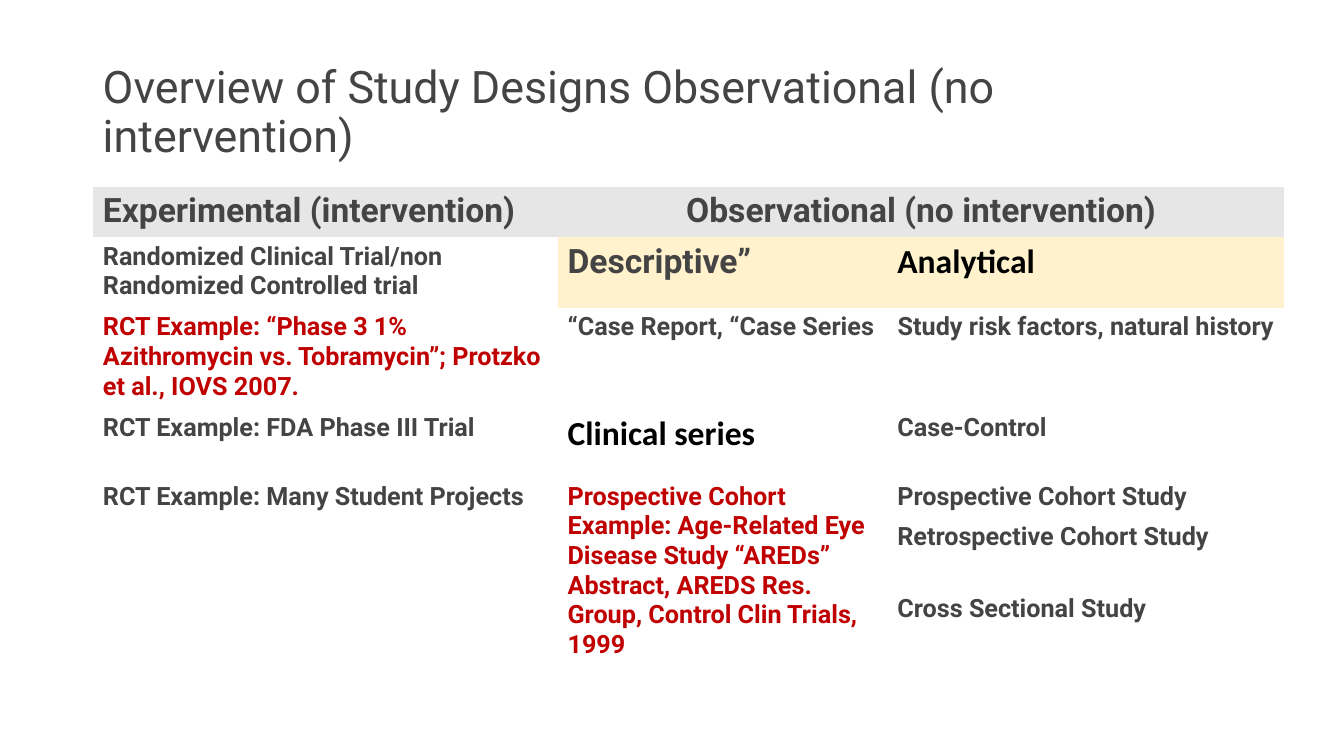
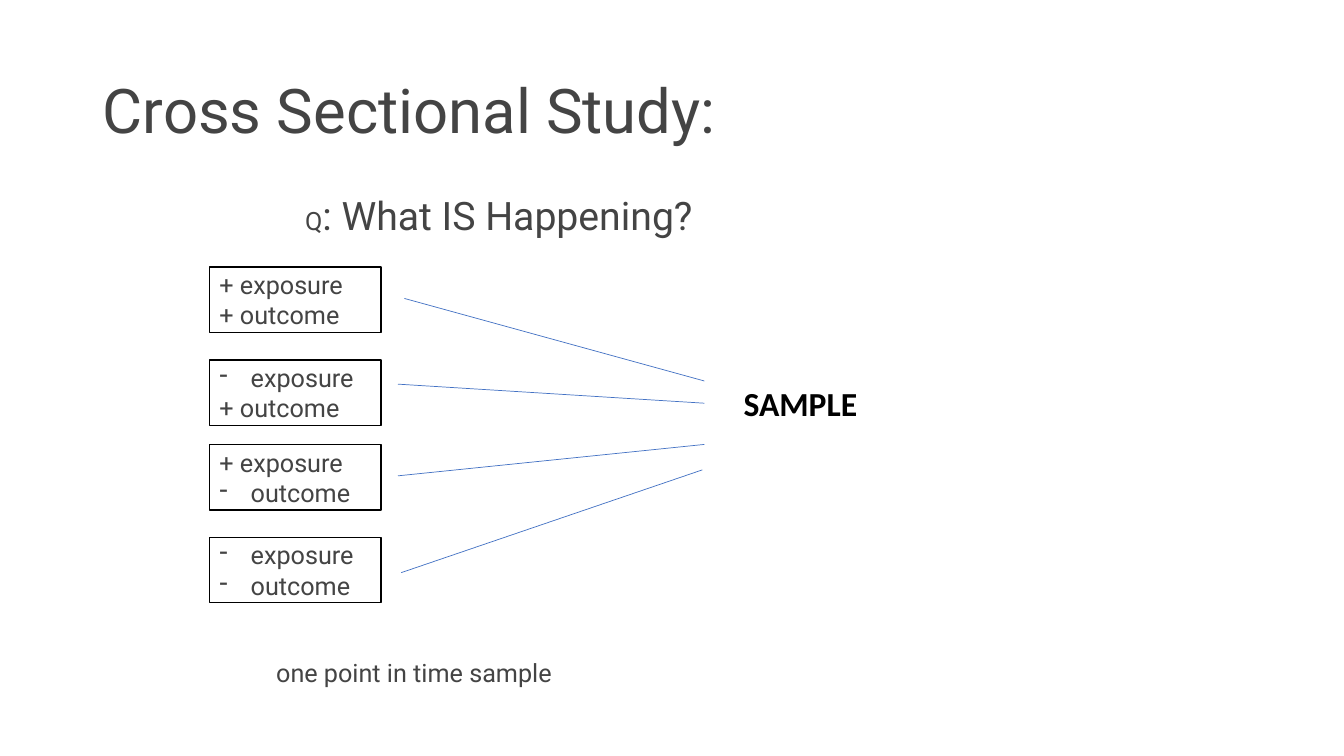
from lxml.etree import SubElement
from pptx import Presentation
from pptx.dml.color import RGBColor
from pptx.enum.shapes import MSO_CONNECTOR, MSO_SHAPE
from pptx.enum.text import MSO_ANCHOR, PP_ALIGN
from pptx.oxml.ns import qn
from pptx.util import Cm, Pt

GREY, BLACK, RED, BLUE = "444444", "000000", "C00000", "4472C4"
WHITE, HEADER_FILL, SUBHEAD_FILL = "FFFFFF", "E7E6E6", "FFF2CC"
BODY_FONT, ACCENT_FONT = "Roboto", "Calibri"
PLAIN_TABLE = "{2D5ABB26-0587-4C30-8999-92F81FD0307C}"
HEADING = {"size": 24}
ACCENT = {"size": 24, "color": BLACK, "font": ACCENT_FONT}
CITED = {"color": RED}

COLUMN_WIDTHS = (11.71, 8.31, 10.01)
ROW_HEIGHTS = (1.27, 1.73, 2.46, 1.73, 0.98, 1.8, 1.95)
DESIGNS = [
    [("Experimental (intervention)", HEADING),
     ("Observational (no intervention)", {"size": 24, "align": PP_ALIGN.CENTER}),
     None],
    [("Randomized Clinical Trial/non Randomized Controlled trial", {}),
     ("Descriptive”", HEADING),
     ("Analytical", ACCENT)],
    [("RCT Example: “Phase 3 1% Azithromycin vs. Tobramycin”; "
      "Protzko et al., IOVS 2007.", CITED),
     ("“Case Report, “Case Series", {}),
     ("Study risk factors, natural history", {"align": PP_ALIGN.CENTER})],
    [("RCT Example: FDA Phase III Trial", {}),
     ("Clinical series", ACCENT),
     ("Case-Control", {})],
    [("RCT Example: Many Student Projects", {}),
     ("Prospective Cohort Example: Age-Related Eye Disease Study “AREDs” "
      "Abstract, AREDS Res. Group, Control Clin Trials, 1999", CITED),
     ("Prospective Cohort Study", {})],
    [None, None, ("Retrospective Cohort Study", {})],
    [None, None, ("Cross Sectional Study", {})],
]
MERGES = (((0, 1), (0, 2)), ((4, 0), (6, 0)), ((4, 1), (6, 1)))

GROUPS = ((6.73, "+", "+"), (9.07, "-", "+"), (11.2, "+", "-"), (13.54, "-", "-"))
SAMPLE_LINES = (
    (10.19, 7.52, 17.75, 9.6),
    (10.03, 9.68, 17.75, 10.16),
    (10.03, 11.99, 17.75, 11.2),
    (10.11, 14.43, 17.7, 11.84),
)


def rgb(color):
    return RGBColor.from_string(color)


def write(paragraph, text, size=18, color=GREY, font=BODY_FONT, bold=False,
          align=None, spacing=None):
    run = paragraph.add_run()
    run.text = text
    run.font.size = Pt(size)
    run.font.name = font
    run.font.bold = bold
    run.font.color.rgb = rgb(color)
    if align is not None:
        paragraph.alignment = align
    if spacing is not None:
        paragraph.line_spacing = spacing


def add_dash(paragraph):
    properties = paragraph._p.get_or_add_pPr()
    properties.set("marL", str(Cm(0.79)))
    properties.set("indent", str(-Cm(0.79)))
    SubElement(properties, qn("a:buChar")).set("char", "-")


def add_text(slide, left, top, width, height, anchor=MSO_ANCHOR.TOP):
    frame = slide.shapes.add_textbox(
        Cm(left), Cm(top), Cm(width), Cm(height)).text_frame
    frame.word_wrap = True
    frame.vertical_anchor = anchor
    return frame.paragraphs[0]


def add_title(slide, text, size):
    title = add_text(slide, 2.34, 1.02, 29.21, 3.68, MSO_ANCHOR.MIDDLE)
    write(title, text, size=size, spacing=0.9)


def cell_fill(row, column):
    if row == 0:
        return HEADER_FILL
    return SUBHEAD_FILL if row == 1 and column > 0 else WHITE


def add_design_table(slide):
    table = slide.shapes.add_table(
        len(ROW_HEIGHTS), len(COLUMN_WIDTHS), Cm(2.34), Cm(4.7),
        Cm(sum(COLUMN_WIDTHS)), Cm(sum(ROW_HEIGHTS))).table
    table.first_row = table.horz_banding = False
    table._tbl.tblPr.find(qn("a:tableStyleId")).text = PLAIN_TABLE
    for column, width in zip(table.columns, COLUMN_WIDTHS):
        column.width = Cm(width)
    for row, height in zip(table.rows, ROW_HEIGHTS):
        row.height = Cm(height)
    for first, last in MERGES:
        table.cell(*first).merge(table.cell(*last))
    for row, entries in enumerate(DESIGNS):
        for column, entry in enumerate(entries):
            cell = table.cell(row, column)
            cell.fill.solid()
            cell.fill.fore_color.rgb = rgb(cell_fill(row, column))
            if entry:
                text, style = entry
                write(cell.text_frame.paragraphs[0], text, bold=True, **style)


def add_group(slide, top, exposure, outcome):
    group = slide.shapes.add_shape(
        MSO_SHAPE.RECTANGLE, Cm(5.28), Cm(top), Cm(4.32), Cm(1.65))
    group.shadow.inherit = False
    group.fill.solid()
    group.fill.fore_color.rgb = rgb(WHITE)
    group.line.color.rgb = rgb(BLACK)
    group.line.width = Pt(1)
    frame = group.text_frame
    frame.vertical_anchor = MSO_ANCHOR.MIDDLE
    paragraphs = (frame.paragraphs[0], frame.add_paragraph())
    factors = ((exposure, "exposure"), (outcome, "outcome"))
    for paragraph, (sign, factor) in zip(paragraphs, factors):
        if sign == "-":
            add_dash(paragraph)
            write(paragraph, factor, align=PP_ALIGN.LEFT)
        else:
            write(paragraph, f"+ {factor}", align=PP_ALIGN.LEFT)


def add_line(slide, *ends):
    line = slide.shapes.add_connector(
        MSO_CONNECTOR.STRAIGHT, *(Cm(end) for end in ends))
    line.line.color.rgb = rgb(BLUE)
    line.line.width = Pt(0.5)
    SubElement(line._element.spPr, qn("a:effectLst"))


def build_overview(slide):
    add_title(slide, "Overview of Study Designs Observational (no intervention)", 32)
    add_design_table(slide)


def build_cross_sectional(slide):
    add_title(slide, "Cross Sectional Study:", 44)
    question = add_text(slide, 7.44, 4.7, 11.05, 1.45)
    write(question, "Q")
    write(question, ": What IS Happening?", size=28)
    for group in GROUPS:
        add_group(slide, *group)
    for ends in SAMPLE_LINES:
        add_line(slide, *ends)
    write(add_text(slide, 18.49, 9.53, 4.6, 1.27), "SAMPLE", bold=True, **ACCENT)
    write(add_text(slide, 6.71, 16.45, 16.94, 1.03), "one point in time sample")


def main():
    deck = Presentation()
    deck.slide_width, deck.slide_height = Cm(33.87), Cm(19.05)
    for build in (build_overview, build_cross_sectional):
        build(deck.slides.add_slide(deck.slide_layouts[6]))
    deck.save("out.pptx")


if __name__ == "__main__":
    main()
